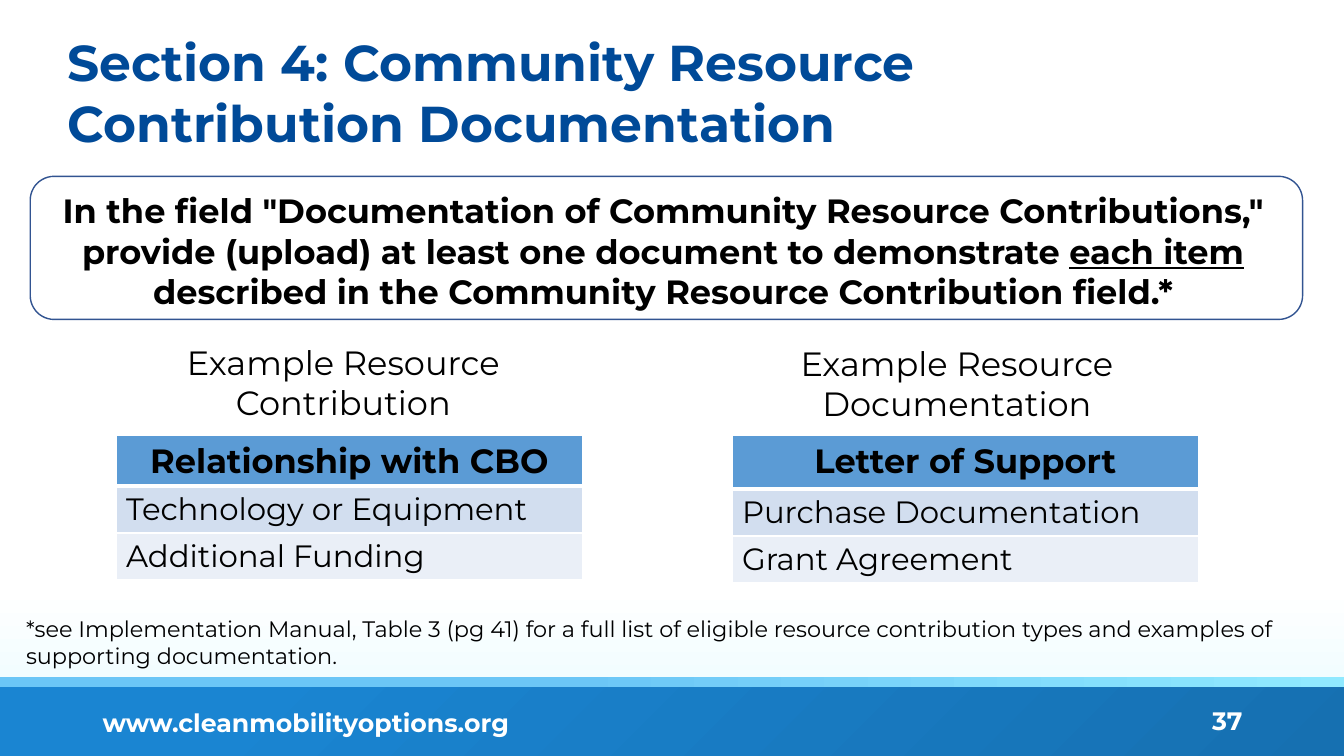
from lxml.etree import SubElement
from pptx import Presentation
from pptx.dml.color import RGBColor
from pptx.enum.shapes import MSO_SHAPE
from pptx.enum.text import MSO_ANCHOR, PP_ALIGN
from pptx.oxml.ns import qn
from pptx.util import Inches, Pt


def color(value):
    """Turn a hex string into a colour."""
    return RGBColor.from_string(value)


class SlideBuilder:
    """Hold the style and slide; boxes are percentages of the slide's size."""

    FONT = "Montserrat"
    BLACK = "000000"
    WHITE = "FFFFFF"
    ROW_FILLS = ("5B9BD5", "D2DEEF", "EAEFF7")

    def __init__(self, presentation):
        """Add a title-only slide."""
        self.width = presentation.slide_width
        self.height = presentation.slide_height
        self.slide = presentation.slides.add_slide(presentation.slide_layouts[5])

    def across(self, share):
        """Convert a percentage of the width to a length."""
        return round(self.width * share / 100)

    def down(self, share):
        """Convert a percentage of the height to a length."""
        return round(self.height * share / 100)

    def place(self, box):
        """Convert left, top, width and height to lengths."""
        left, top, width, height = box
        return self.across(left), self.down(top), self.across(width), self.down(height)

    def add_runs(self, frame, paragraphs, size, hue=BLACK, bold=False,
                 align=PP_ALIGN.LEFT, anchor=MSO_ANCHOR.TOP):
        """Fill a text frame with paragraphs of (text, underlined) runs."""
        frame.word_wrap = True
        frame.vertical_anchor = anchor
        for index, runs in enumerate(paragraphs):
            paragraph = frame.add_paragraph() if index else frame.paragraphs[0]
            paragraph.alignment = align
            for text, underlined in runs:
                run = paragraph.add_run()
                run.text = text
                run.font.name = self.FONT
                run.font.size = Pt(size)
                run.font.bold = bold
                run.font.underline = underlined
                run.font.color.rgb = color(hue)

    def title(self, box, text):
        """Move, format and fill the title placeholder."""
        shape = self.slide.shapes.title
        shape.left, shape.top, shape.width, shape.height = self.place(box)
        frame = shape.text_frame
        frame.margin_left = frame.margin_right = Inches(0.13)
        frame.margin_top = frame.margin_bottom = Inches(0.07)
        self.add_runs(frame, [[(text, False)]], 36, "004A98", True)
        frame.paragraphs[0].space_after = Pt(8)

    def text(self, box, lines, size, **style):
        """Add a text box with one plain run for each line."""
        shape = self.slide.shapes.add_textbox(*self.place(box))
        self.add_runs(shape.text_frame, [[(line, False)] for line in lines], size, **style)

    def shape(self, kind, box, fill=None, outline=None):
        """Add a preset shape with an optional solid fill and outline."""
        shape = self.slide.shapes.add_shape(kind, *self.place(box))
        shape.shadow.inherit = False
        if fill:
            shape.fill.solid()
            shape.fill.fore_color.rgb = color(fill)
        else:
            shape.fill.background()
        if outline:
            shape.line.color.rgb = color(outline)
            shape.line.width = Pt(1)
        else:
            shape.line.fill.background()
        return shape

    def gradient(self, box, angle, stops):
        """Add a rectangle with a two-stop gradient."""
        fill = self.shape(MSO_SHAPE.RECTANGLE, box).fill
        fill.gradient()
        fill.gradient_angle = angle
        for stop, (position, hue) in zip(fill.gradient_stops, stops):
            stop.position = position
            stop.color.rgb = color(hue)

    def border(self, cell, header):
        """Draw white borders, heavier below the header."""
        properties = cell._tc.get_or_add_tcPr()
        for side in "LRTB":
            points = 3 if header and side == "B" else 1
            line = SubElement(properties, qn(f"a:ln{side}"), w=str(Pt(points)))
            fill = SubElement(line, qn("a:solidFill"))
            SubElement(fill, qn("a:srgbClr"), val=self.WHITE)

    def table(self, box, header_height, texts):
        """Add a one-column table with a header row."""
        table = self.slide.shapes.add_table(len(texts), 1, *self.place(box)).table
        for index, (text, fill) in enumerate(zip(texts, self.ROW_FILLS)):
            header = index == 0
            table.rows[index].height = self.down(header_height if header else 5.47)
            cell = table.cell(index, 0)
            self.border(cell, header)
            cell.fill.solid()
            cell.fill.fore_color.rgb = color(fill)
            self.add_runs(cell.text_frame, [[(text, False)]], 24 if header else 22,
                          bold=header, align=PP_ALIGN.CENTER if header else PP_ALIGN.LEFT)


def main():
    """Build and save the slide."""
    presentation = Presentation()
    presentation.slide_width = Inches(13.33)
    presentation.slide_height = Inches(7.5)
    builder = SlideBuilder(presentation)

    builder.gradient((0, 77.6, 100, 22.4), 90, [(0, "E5FBFE"), (1, "FFFFFF")])
    builder.gradient((0, 90.8, 100, 9.2), 135, [(0, "1670B1"), (0.83, "1A85D2")])
    builder.gradient((0, 89.6, 100, 1.33), 0, [(0.42, "6BC6F6"), (1, "90E9FF")])
    footer = {"hue": builder.WHITE, "bold": True, "anchor": MSO_ANCHOR.MIDDLE}
    builder.text((6.9, 92.93, 44.11, 5.33), ["www.cleanmobilityoptions.org"], 18, **footer)

    builder.title((4.05, 3.2, 69.17, 18),
                  "Section 4: Community Resource Contribution Documentation")

    builder.shape(MSO_SHAPE.ROUNDED_RECTANGLE, (2.25, 23.33, 94.67, 18.93), outline="325491")
    instruction = builder.shape(MSO_SHAPE.RECTANGLE, (3.68, 24.53, 91.3, 17.47), builder.WHITE)
    builder.add_runs(instruction.text_frame, [[
        ('In the field "Documentation of Community Resource Contributions," provide '
         "(upload) at least one document to demonstrate ", False),
        ("each item ", True),
        ("described in the Community Resource Contribution field.*", False),
    ]], 24, bold=True, align=PP_ALIGN.CENTER)

    examples = [
        ((12.3, 44.53, 26.48, 12.13), ["Example Resource", "Contribution"], 8.63, 5.87,
         ["Relationship with CBO", "Technology or Equipment", "Additional Funding"]),
        ((56.79, 44.67, 28.81, 12.13), ["Example Resource Documentation"], 54.46, 7.07,
         ["Letter of Support", "Purchase Documentation", "Grant Agreement"]),
    ]
    for heading_box, heading, left, header_height, texts in examples:
        builder.text(heading_box, heading, 24, align=PP_ALIGN.CENTER)
        builder.table((left, 57.6, 34.73, 19), header_height, texts)

    builder.text((1.2, 80.67, 97.67, 8.53), [
        "*see Implementation Manual, Table 3 (pg 41) for a full list of eligible resource "
        "contribution types and examples of supporting documentation."], 16)
    builder.text((70.67, 92.67, 22.51, 5.33), ["37"], 18, align=PP_ALIGN.RIGHT, **footer)

    presentation.save("out.pptx")


if __name__ == "__main__":
    main()
